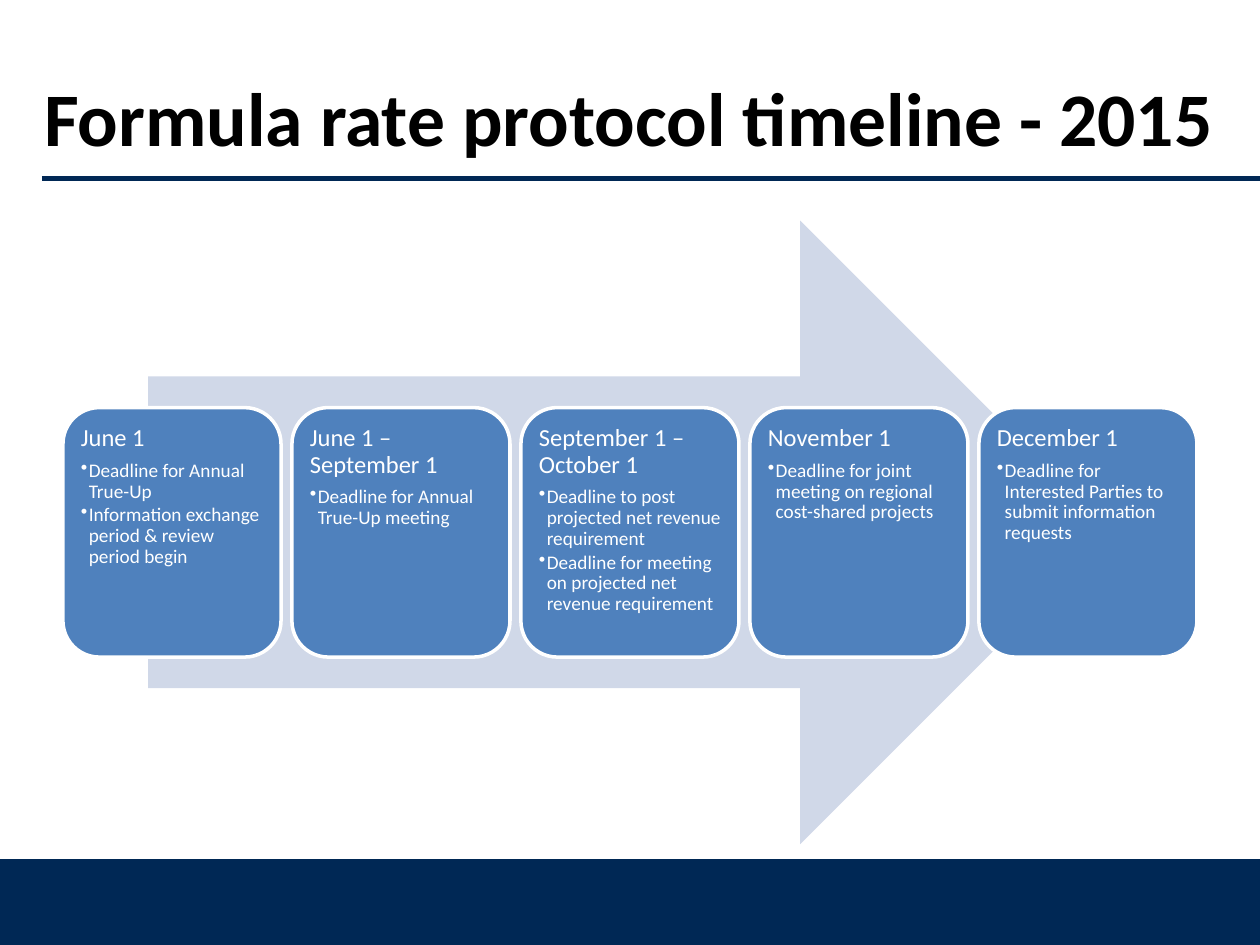
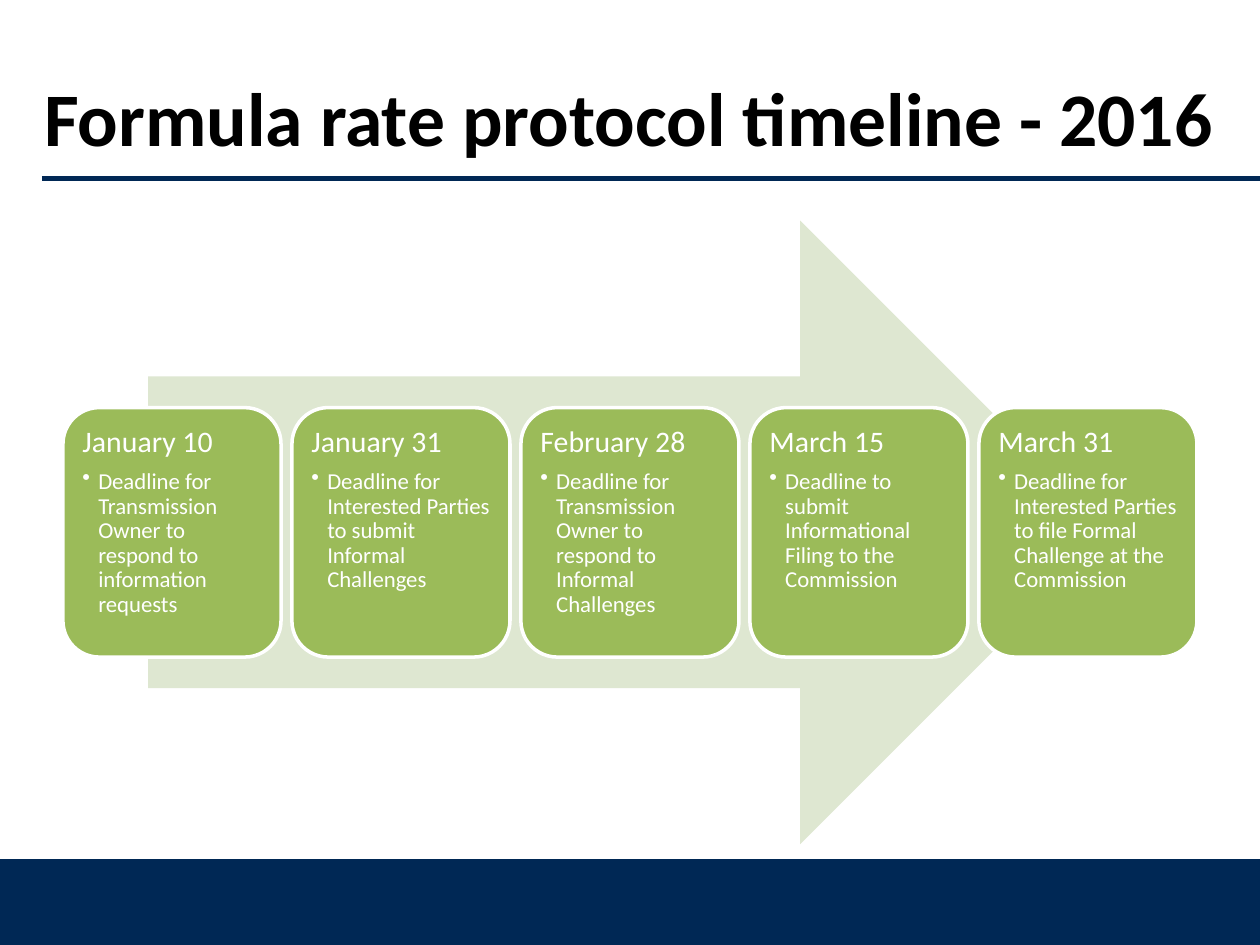
from lxml.etree import SubElement
from pptx import Presentation
from pptx.dml.color import RGBColor
from pptx.enum.shapes import MSO_CONNECTOR, MSO_SHAPE
from pptx.enum.text import MSO_ANCHOR, MSO_AUTO_SIZE, PP_ALIGN
from pptx.oxml.ns import qn
from pptx.util import Pt

# Content
TIMELINES = [
    {
        "title": "Formula rate protocol timeline - 2015",
        "card_color": "4F81BD", "arrow_color": "D0D8E8",
        "date_size": 14, "task_size": 11, "indent": 4.5,
        "milestones": [
            ("June 1", ["Deadline for Annual True-Up",
                        "Information exchange period & review period begin"]),
            ("June 1 – September 1", ["Deadline for Annual True-Up meeting"]),
            ("September 1 – October 1",
             ["Deadline to post projected net revenue requirement",
              "Deadline for meeting on projected net revenue requirement"]),
            ("November 1",
             ["Deadline for joint meeting on regional cost-shared projects"]),
            ("December 1",
             ["Deadline for Interested Parties to submit information requests"]),
        ],
    },
    {
        "title": "Formula rate protocol timeline - 2016",
        "card_color": "9BBB59", "arrow_color": "DEE7D1",
        "date_size": 17, "task_size": 13, "indent": 9,
        "milestones": [
            ("January 10", ["Deadline for Transmission Owner to respond to "
                            "information requests"]),
            ("January 31", ["Deadline for Interested Parties to submit "
                            "Informal Challenges"]),
            ("February 28", ["Deadline for Transmission Owner to respond to "
                             "Informal Challenges"]),
            ("March 15", ["Deadline to submit Informational Filing to the "
                          "Commission"]),
            ("March 31", ["Deadline for Interested Parties to file Formal "
                          "Challenge at the Commission"]),
        ],
    },
]

# Shared style and geometry, in points
FONT, NAVY, WHITE, BLACK = "Calibri", "002855", "FFFFFF", "000000"
SLIDE_W, SLIDE_H = 720, 540
BAND_TOP, RULE_LEFT, RULE_Y = 491.8, 24, 102.2
AREA_LEFT, AREA_TOP, AREA_W, AREA_H = 36, 126, 648, 356.4
ARROW_SHARE, CARD_SHARE, GAP_SHARE = 0.85, 0.4, 0.05


def rgb(color):
    return RGBColor.from_string(color)


def add_block(slide, kind, left, top, width, height, fill, line=None):
    block = slide.shapes.add_shape(kind, Pt(left), Pt(top), Pt(width), Pt(height))
    block.shadow.inherit = False
    block.fill.solid()
    block.fill.fore_color.rgb = rgb(fill)
    if line:
        block.line.color.rgb = rgb(line)
        block.line.width = Pt(2)
    else:
        block.line.fill.background()
    return block


def write(frame, text, size, color=WHITE, bold=False, first=False,
          spacing=None, after=0, indent=0):
    paragraph = frame.paragraphs[0] if first else frame.add_paragraph()
    if indent:
        paragraph.level = 1
        properties = paragraph._p.get_or_add_pPr()
        properties.set("marL", str(Pt(indent)))
        properties.set("indent", str(-Pt(indent)))
        SubElement(properties, qn("a:buChar"), char="•")
    paragraph.alignment = PP_ALIGN.LEFT
    paragraph.line_spacing = spacing
    paragraph.space_before = Pt(0)
    paragraph.space_after = Pt(after)
    run = paragraph.add_run()
    run.text = text
    run.font.name, run.font.size, run.font.bold = FONT, Pt(size), bold
    run.font.color.rgb = rgb(color)


def add_frame(slide, title):
    # Bottom band and rule under the title
    add_block(slide, MSO_SHAPE.RECTANGLE, 0, BAND_TOP, SLIDE_W,
              SLIDE_H - BAND_TOP, NAVY, NAVY)
    rule = slide.shapes.add_connector(MSO_CONNECTOR.STRAIGHT, Pt(RULE_LEFT),
                                      Pt(RULE_Y), Pt(SLIDE_W), Pt(RULE_Y))
    rule.line.color.rgb = rgb(NAVY)
    rule.line.width = Pt(3)
    SubElement(rule._element.spPr, qn("a:effectLst"))

    # Title
    heading = slide.shapes.title
    heading.left, heading.top = Pt(18), Pt(21.6)
    heading.width, heading.height = Pt(684), Pt(90)
    frame = heading.text_frame
    frame.word_wrap = True
    frame.auto_size = MSO_AUTO_SIZE.NONE
    frame.vertical_anchor = MSO_ANCHOR.MIDDLE
    write(frame, title, 43.2, color=BLACK, bold=True, first=True)


def add_timeline(slide, timeline):
    # Arrow centred behind the cards
    arrow_w = AREA_W * ARROW_SHARE
    add_block(slide, MSO_SHAPE.RIGHT_ARROW, AREA_LEFT + (AREA_W - arrow_w) / 2,
              AREA_TOP, arrow_w, AREA_H, timeline["arrow_color"])

    # One card per milestone, with gaps in proportion to the card width
    milestones = timeline["milestones"]
    count = len(milestones)
    card_w = AREA_W / (count + (count - 1) * GAP_SHARE)
    card_h = AREA_H * CARD_SHARE
    card_top = AREA_TOP + (AREA_H - card_h) / 2
    date_size, task_size = timeline["date_size"], timeline["task_size"]
    for i, (date, tasks) in enumerate(milestones):
        card = add_block(slide, MSO_SHAPE.ROUNDED_RECTANGLE,
                         AREA_LEFT + i * card_w * (1 + GAP_SHARE), card_top,
                         card_w, card_h, timeline["card_color"], WHITE)
        frame = card.text_frame
        frame.word_wrap = True
        frame.vertical_anchor = MSO_ANCHOR.TOP
        inset = Pt(date_size * 0.3)
        frame.margin_left = frame.margin_right = inset
        frame.margin_top = frame.margin_bottom = inset
        write(frame, date, date_size, first=True, spacing=0.9,
              after=date_size * 0.35)
        for task in tasks:
            write(frame, task, task_size, spacing=0.9, after=task_size * 0.15,
                  indent=timeline["indent"])


def main():
    deck = Presentation()
    deck.slide_width, deck.slide_height = Pt(SLIDE_W), Pt(SLIDE_H)
    title_only = deck.slide_layouts[5]
    for timeline in TIMELINES:
        slide = deck.slides.add_slide(title_only)
        add_frame(slide, timeline["title"])
        add_timeline(slide, timeline)
    deck.save("out.pptx")


if __name__ == "__main__":
    main()
